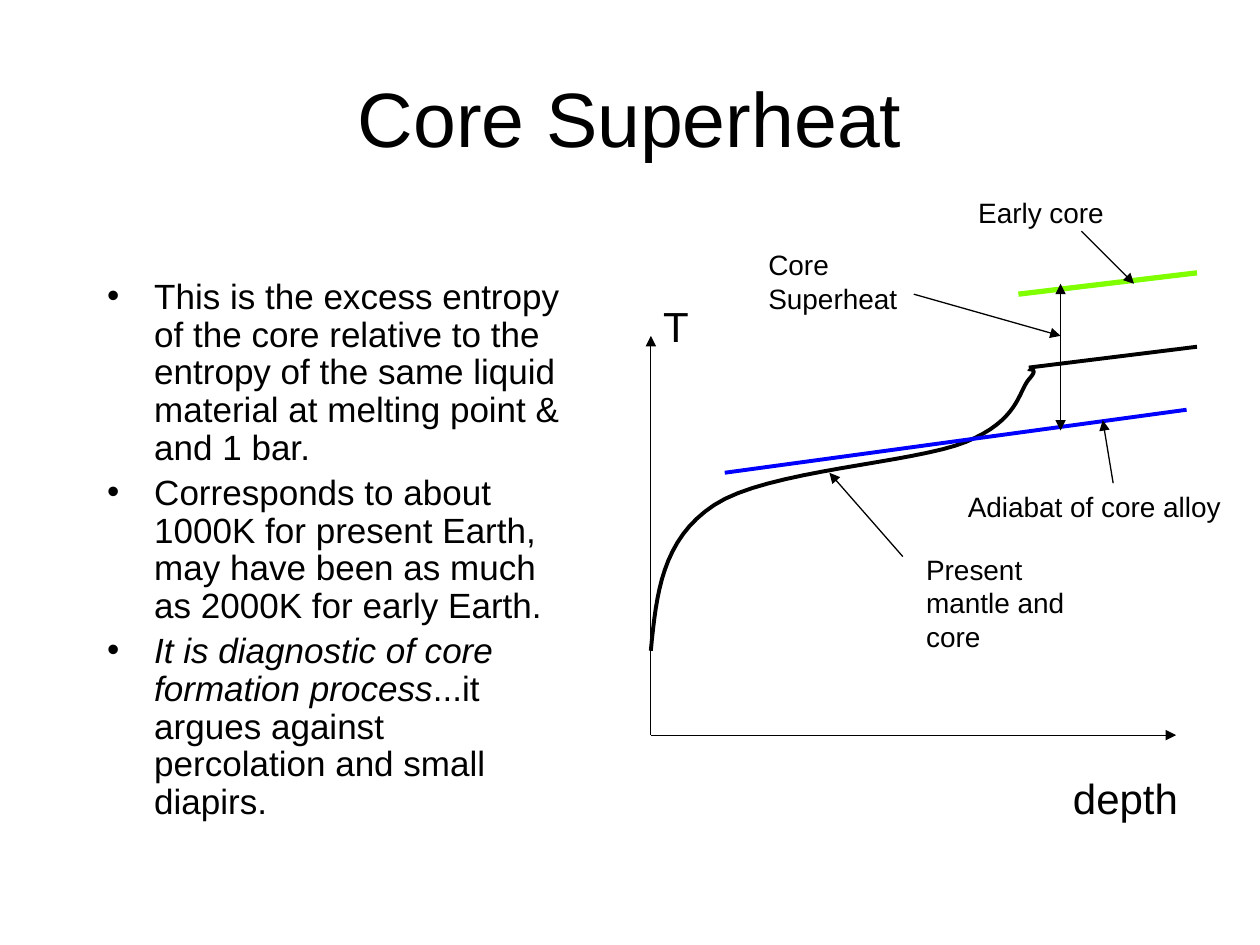
from dataclasses import dataclass

from lxml import etree
from pptx import Presentation
from pptx.dml.color import RGBColor
from pptx.enum import text
from pptx.enum import shapes
from pptx.oxml import ns
from pptx.util import Cm, Pt


@dataclass(frozen=True)
class Theme:
    font: str = "Arial"
    black: str = "000000"
    blue: str = "0000FF"
    green: str = "80FF00"
    title: int = 44
    axis: int = 24
    body: int = 20
    label: int = 16
    thin: float = 0.75
    curve: float = 2.25
    thick: float = 3


THEME = Theme()

BULLETS = [
    [("This is the excess entropy of the core relative to the entropy of the "
      "same liquid material at melting point & and 1 bar.", False)],
    [("Corresponds to about 1000K for present Earth, may have been as much as "
      "2000K for early Earth.", False)],
    [("It is diagnostic of core formation process", True),
     ("...it argues against percolation and small diapirs.", False)],
]

AXES_ORIGIN = (13.12, 14.82)
AXIS_ENDS = [(13.12, 6.77), (23.71, 14.82)]

GEOTHERM_START = (13.12, 13.12)
GEOTHERM_CURVES = [
    [(13.23, 11.99), (13.34, 10.87), (14.4, 10.18)],
    [(15.45, 9.48), (18.42, 9.34), (19.47, 8.91)],
    [(20.53, 8.48), (20.53, 7.9), (20.74, 7.65)],
    [(20.96, 7.41), (20.74, 7.46), (20.74, 7.44)],
]

PROFILES = [
    ((20.74, 7.41), (24.13, 6.99), THEME.black, THEME.curve),
    ((14.61, 9.53), (23.92, 8.26), THEME.blue, THEME.curve),
    ((20.53, 5.93), (24.13, 5.5), THEME.green, THEME.thick),
]

POINTERS = [
    ((18.42, 5.93), (21.38, 6.77)),
    ((21.8, 4.66), (22.86, 5.72)),
    ((18.2, 11.22), (16.72, 9.53)),
    ((22.44, 9.74), (22.23, 8.47)),
]

LABELS = [
    ("T", 13.12, 5.93, 1.06, 1.27, THEME.axis),
    ("depth", 21.38, 15.45, 2.96, 1.27, THEME.axis),
    ("Core Superheat", 15.24, 4.87, 3.39, 1.62, THEME.label),
    ("Early core", 19.47, 3.81, 3.18, 0.93, THEME.label),
    ("Present mantle and core", 18.42, 11.01, 4.02, 2.31, THEME.label),
    ("Adiabat of core alloy", 19.26, 9.74, 5.72, 0.93, THEME.label),
]


def add_run(p, words, size, italic=False):
    r = p.add_run()
    r.text = words
    r.font.name = THEME.font
    r.font.size = Pt(size)
    r.font.italic = italic
    r.font.color.rgb = RGBColor.from_string(THEME.black)


def set_title(s, words):
    sp = s.shapes.title
    sp.left, sp.top, sp.width, sp.height = Cm(1.27), Cm(0.76), Cm(22.86), Cm(3.18)
    tf = sp.text_frame
    tf.vertical_anchor = text.MSO_ANCHOR.MIDDLE
    p = tf.paragraphs[0]
    p.alignment = text.PP_ALIGN.CENTER
    add_run(p, words, THEME.title)


def add_box(s, x, y, w, h):
    tf = s.shapes.add_textbox(Cm(x), Cm(y), Cm(w), Cm(h)).text_frame
    tf.word_wrap = True
    return tf


def add_label(s, words, x, y, w, h, size):
    add_run(add_box(s, x, y, w, h).paragraphs[0], words, size)


def add_bullets(s, items):
    tf = add_box(s, 1.91, 5.5, 9.74, 11.43)
    for i, runs in enumerate(items):
        p = tf.add_paragraph() if i else tf.paragraphs[0]
        p.line_spacing = 0.9
        p.space_before = Pt(4 if i else 0)
        pPr = p._p.get_or_add_pPr()
        pPr.set("marL", str(Cm(0.95)))
        pPr.set("indent", str(Cm(-0.95)))
        etree.SubElement(pPr, ns.qn("a:buFont"), typeface=THEME.font)
        etree.SubElement(pPr, ns.qn("a:buChar"), char="•")
        for words, italic in runs:
            add_run(p, words, THEME.body, italic)


def style_line(line, color, width):
    line.color.rgb = RGBColor.from_string(color)
    line.width = Pt(width)


def add_line(s, start, end, color=THEME.black, width=THEME.thin, arrows=()):
    cx = s.shapes.add_connector(
        shapes.MSO_CONNECTOR.STRAIGHT, *(Cm(v) for v in start + end))
    style_line(cx.line, color, width)
    spPr = cx._element.spPr
    for arrow in arrows:
        etree.SubElement(spPr.find(ns.qn("a:ln")), ns.qn(f"a:{arrow}"), type="triangle")
    etree.SubElement(spPr, ns.qn("a:effectLst"))


def bezier_points(start, curves, steps=16):
    for c1, c2, end in curves:
        for t in (i / steps for i in range(1, steps + 1)):
            weights = ((1 - t) ** 3, 3 * t * (1 - t) ** 2, 3 * t ** 2 * (1 - t), t ** 3)
            yield tuple(sum(w * v for w, v in zip(weights, axis))
                        for axis in zip(start, c1, c2, end))
        start = end


def add_curve(s, start, curves):
    builder = s.shapes.build_freeform(Cm(start[0]), Cm(start[1]))
    builder.add_line_segments(
        [(Cm(x), Cm(y)) for x, y in bezier_points(start, curves)], close=False)
    sp = builder.convert_to_shape()
    sp.shadow.inherit = False
    sp.fill.background()
    style_line(sp.line, THEME.black, THEME.curve)


def main():
    prs = Presentation()
    prs.slide_width, prs.slide_height = Cm(25.4), Cm(19.05)
    s = prs.slides.add_slide(prs.slide_layouts.get_by_name("Title Only"))
    set_title(s, "Core Superheat")
    add_bullets(s, BULLETS)
    for end in AXIS_ENDS:
        add_line(s, AXES_ORIGIN, end, arrows=["tailEnd"])
    add_curve(s, GEOTHERM_START, GEOTHERM_CURVES)
    for profile in PROFILES:
        add_line(s, *profile)
    add_line(s, (21.38, 5.72), (21.38, 8.68), arrows=["headEnd", "tailEnd"])
    for start, end in POINTERS:
        add_line(s, start, end, arrows=["tailEnd"])
    for label in LABELS:
        add_label(s, *label)
    prs.save("out.pptx")


if __name__ == "__main__":
    main()
